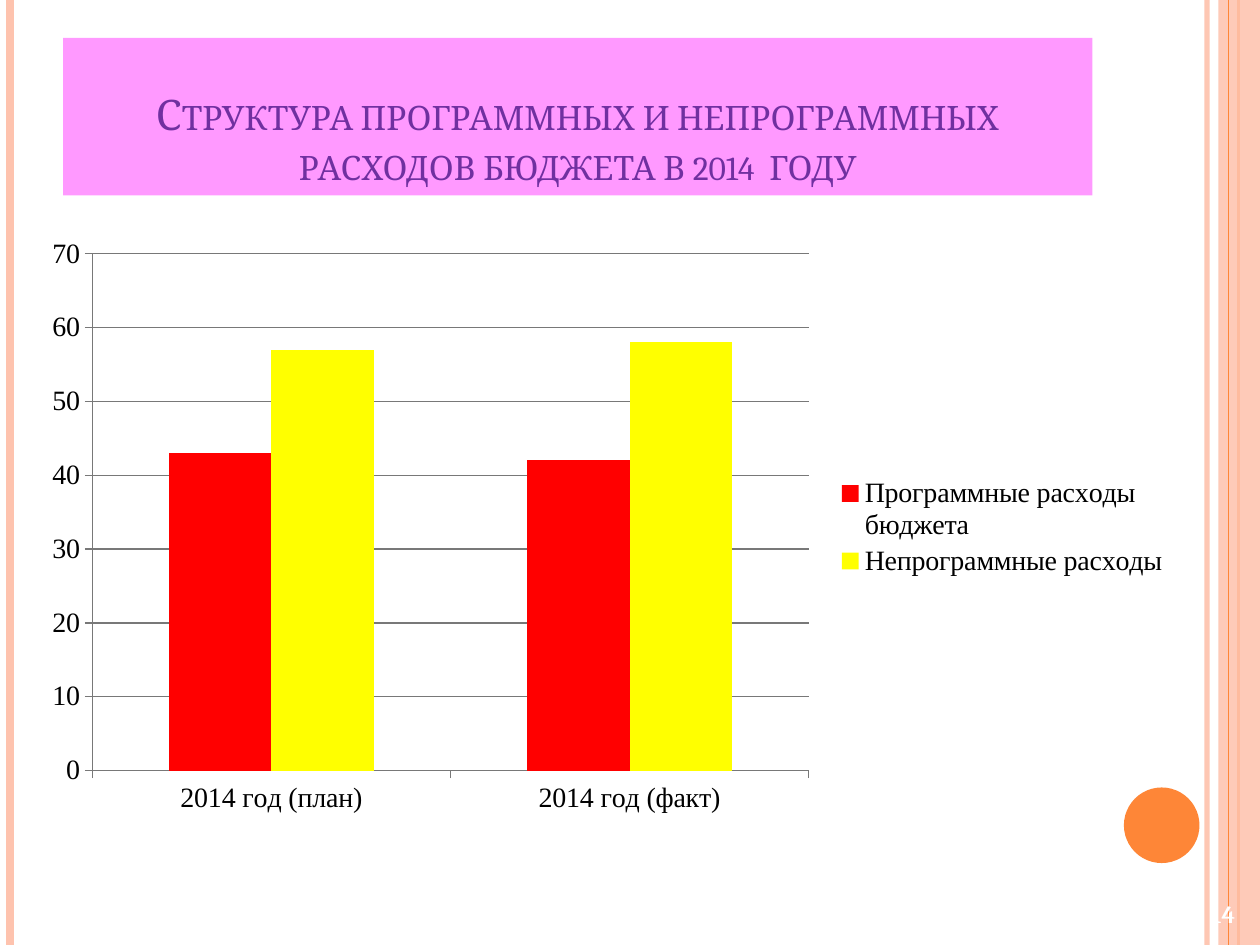
from lxml import etree
from pptx import Presentation
from pptx.chart.data import CategoryChartData
from pptx.dml.color import RGBColor
from pptx.enum.chart import XL_CHART_TYPE, XL_LEGEND_POSITION, XL_TICK_MARK
from pptx.enum.shapes import MSO_CONNECTOR, MSO_SHAPE
from pptx.enum.text import MSO_ANCHOR, MSO_AUTO_SIZE, PP_ALIGN
from pptx.oxml.ns import qn
from pptx.util import Inches, Pt

COLUMNS = XL_CHART_TYPE.COLUMN_CLUSTERED
RIGHT = XL_LEGEND_POSITION.RIGHT
OUT = XL_TICK_MARK.OUTSIDE
STRAIGHT = MSO_CONNECTOR.STRAIGHT
RECT, OVAL = MSO_SHAPE.RECTANGLE, MSO_SHAPE.OVAL
BOTTOM, MIDDLE = MSO_ANCHOR.BOTTOM, MSO_ANCHOR.MIDDLE
CENTER = PP_ALIGN.CENTER
NO_FIT = MSO_AUTO_SIZE.NONE

PEACH = RGBColor(0xFE, 0xC3, 0xAE)
ORANGE = RGBColor(0xFE, 0x86, 0x37)
PINK = RGBColor(0xFF, 0x99, 0xFF)
PURPLE = RGBColor(0x70, 0x30, 0xA0)
WHITE = RGBColor(0xFF, 0xFF, 0xFF)
BLACK = RGBColor(0, 0, 0)
GRAY = RGBColor(0x78, 0x78, 0x78)
RED = RGBColor(0xFF, 0, 0)
YELLOW = RGBColor(0xFF, 0xFF, 0)

HEAD_FONT = "Cambria"
CHART_FONT = "Times New Roman"
CATS = ["2014 год (план)", "2014 год (факт)"]
SERIES = [
    ("Программные расходы бюджета", (43, 42), RED),
    ("Непрограммные расходы", (57, 58), YELLOW),
]


def set_alpha(fill, percent):
    color = fill._xPr.find(".//" + qn("a:srgbClr"))
    etree.SubElement(color, qn("a:alpha")).set("val", str(percent * 1000))


def add_stripe(slide, x, color, width, alpha=100):
    """Draw a line down the full height of the slide."""
    line = slide.shapes.add_connector(
        STRAIGHT, Inches(x), 0, Inches(x), Inches(7.5))
    line.line.color.rgb = color
    line.line.width = Pt(width)
    if alpha < 100:
        set_alpha(line.line.fill, alpha)
    etree.SubElement(line._element.spPr, qn("a:effectLst"))


def add_block(slide, kind, box, color, alpha=100):
    block = slide.shapes.add_shape(kind, *map(Inches, box))
    block.shadow.inherit = False
    block.fill.solid()
    block.fill.fore_color.rgb = color
    block.line.fill.background()
    if alpha < 100:
        set_alpha(block.fill, alpha)


def write(shape, text, size, color, anchor, bold=False):
    frame = shape.text_frame
    frame.word_wrap = True
    frame.auto_size = NO_FIT
    frame.vertical_anchor = anchor
    para = frame.paragraphs[0]
    para.alignment = CENTER
    run = para.add_run()
    run.text = text
    set_font(run.font, HEAD_FONT, size, color)
    run.font.bold = bold
    return run


def set_font(font, name, size, color):
    font.name = name
    font.size = Pt(size)
    font.color.rgb = color


def set_title(slide):
    title = slide.shapes.title
    title.left, title.top = Inches(0.5), Inches(0.3)
    title.width, title.height = Inches(8.17), Inches(1.25)
    title.fill.solid()
    title.fill.fore_color.rgb = PINK
    run = write(
        title,
        "Структура программных и непрограммных расходов бюджета в 2014  году",
        24, PURPLE, BOTTOM)
    run.font._element.set("cap", "small")


def add_number(slide):
    box = slide.shapes.add_textbox(
        Inches(9.45), Inches(7.05), Inches(0.51), Inches(0.4))
    write(box, "14", 14, WHITE, MIDDLE, bold=True)


def set_layout(part, index, inner, **sizes):
    """Fix a chart part's place, in fractions of the chart's size."""
    for old in part.findall(qn("c:layout")):
        part.remove(old)
    layout = etree.Element(qn("c:layout"))
    part.insert(index, layout)
    manual = etree.SubElement(layout, qn("c:manualLayout"))
    values = {"xMode": "edge", "yMode": "edge", **sizes}
    if inner:
        values = {"layoutTarget": "inner", **values}
    for tag, value in values.items():
        etree.SubElement(manual, qn("c:" + tag)).set("val", str(value))


def style_axis(axis):
    axis.major_tick_mark = OUT
    axis.format.line.color.rgb = GRAY
    set_font(axis.tick_labels.font, CHART_FONT, 16, BLACK)


def add_bars(slide):
    data = CategoryChartData()
    data.categories = CATS
    for name, values, _ in SERIES:
        data.add_series(name, values)
    chart = slide.shapes.add_chart(
        COLUMNS, Inches(0.23), Inches(1.8), Inches(9.14), Inches(4.77),
        data).chart
    chart.has_title = False
    set_font(chart.font, HEAD_FONT, 18, BLACK)

    plot = chart.plots[0]
    plot.vary_by_categories = False
    plot.gap_width, plot.overlap = 150, 0
    for series, (_, _, color) in zip(plot.series, SERIES):
        series.format.fill.solid()
        series.format.fill.fore_color.rgb = color

    style_axis(chart.category_axis)
    scale = chart.value_axis
    style_axis(scale)
    scale.minimum_scale, scale.maximum_scale, scale.major_unit = 0, 70, 10
    scale.has_major_gridlines = True
    scale.major_gridlines.format.line.color.rgb = GRAY

    chart.has_legend = True
    legend = chart.legend
    legend.position = RIGHT
    legend.include_in_layout = False
    set_font(legend.font, CHART_FONT, 16, BLACK)

    area = chart._chartSpace.chart.plotArea
    set_layout(area, 0, True, x=0.055, y=0.045, w=0.622, h=0.86)
    set_layout(legend._element, 1, False, x=0.7, y=0.41, w=0.29, h=0.18)


def main():
    deck = Presentation()
    deck.slide_width, deck.slide_height = Inches(10), Inches(7.5)
    slide = deck.slides.add_slide(deck.slide_layouts[5])
    add_stripe(slide, 9.58, PEACH, 3, alpha=93)
    add_stripe(slide, 0.08, PEACH, 4.5)
    add_stripe(slide, 9.83, ORANGE, 1.5)
    add_block(slide, RECT, (9.67, 0, 0.33, 7.5), PEACH, alpha=87)
    add_stripe(slide, 9.75, ORANGE, 0.75)
    add_block(slide, OVAL, (8.92, 6.25, 0.6, 0.6), ORANGE)
    set_title(slide)
    add_bars(slide)
    add_number(slide)
    deck.save("out.pptx")


if __name__ == "__main__":
    main()
